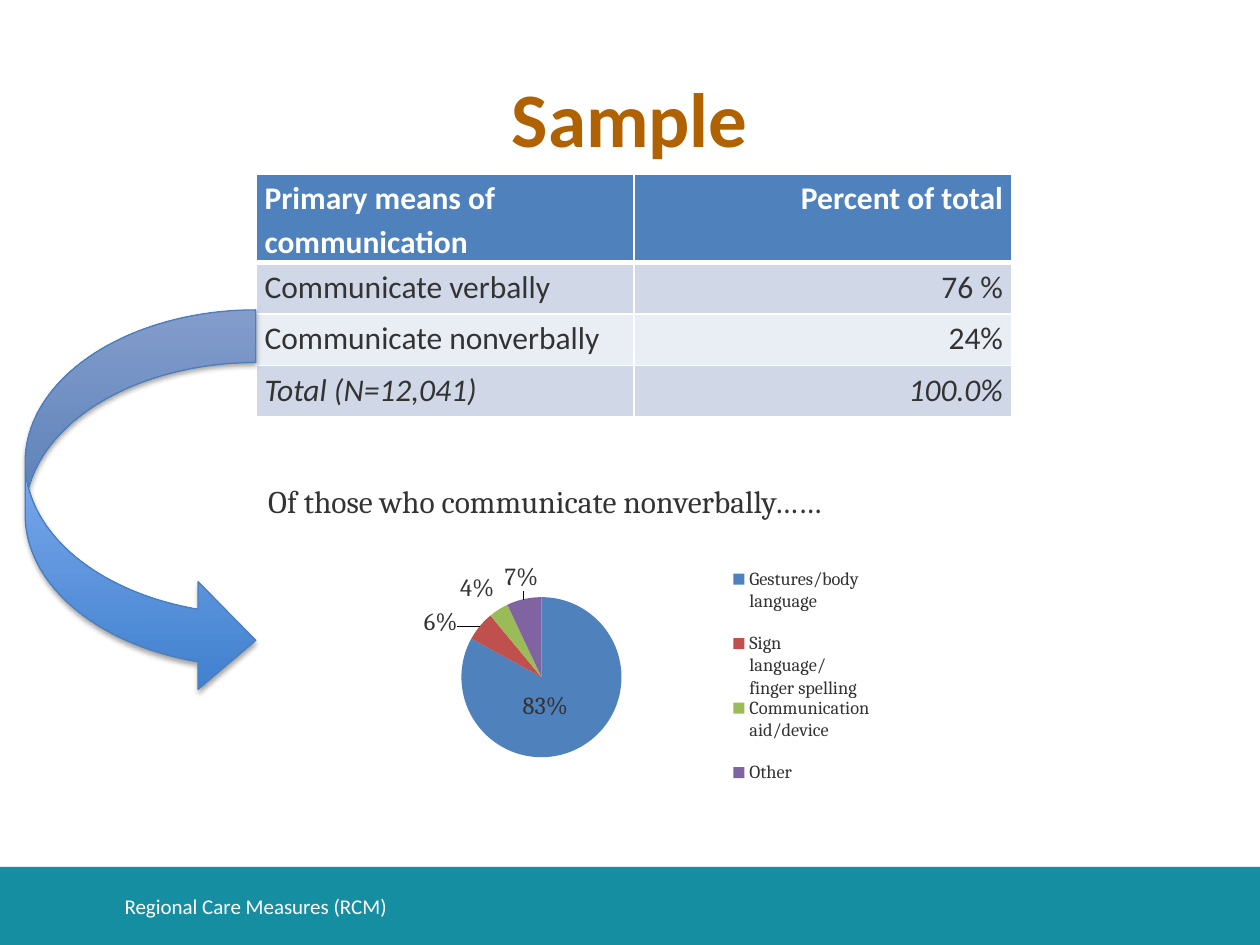
from lxml import etree
from pptx import Presentation
from pptx.chart.data import CategoryChartData
from pptx.dml.color import RGBColor
from pptx.enum.chart import XL_CHART_TYPE, XL_LABEL_POSITION, XL_LEGEND_POSITION
from pptx.enum.shapes import MSO_SHAPE
from pptx.enum.text import MSO_ANCHOR, PP_ALIGN
from pptx.oxml import parse_xml
from pptx.oxml.ns import nsdecls, qn
from pptx.util import Inches, Pt

LEFT, CENTER, RIGHT = PP_ALIGN.LEFT, PP_ALIGN.CENTER, PP_ALIGN.RIGHT
TOP, MIDDLE = MSO_ANCHOR.TOP, MSO_ANCHOR.MIDDLE
LABEL_CENTER, LABEL_OUTSIDE = XL_LABEL_POSITION.CENTER, XL_LABEL_POSITION.OUTSIDE_END
PIE, LEGEND_RIGHT = XL_CHART_TYPE.PIE, XL_LEGEND_POSITION.RIGHT
RECTANGLE, CURVED_ARROW = MSO_SHAPE.RECTANGLE, MSO_SHAPE.CURVED_RIGHT_ARROW

# Content
TEXT_COLOR, WHITE = "333333", "FFFFFF"
TEXTS = [  # text, box, alignment, anchor, format
    ("Sample", (0.5, 0.3, 9, 1.25), CENTER, MIDDLE,
     {"name": "Calibri", "size": Pt(44), "bold": True, "color": "B06100"}),
    ("Regional Care Measures (RCM)", (0.89, 6.99, 7.4, 0.4), LEFT, MIDDLE,
     {"name": "Calibri", "size": Pt(12), "color": WHITE}),
    ("Of those who communicate nonverbally……", (2.03, 3.78, 6.35, 0.4), LEFT, TOP,
     {"name": "Cambria", "size": Pt(18), "color": TEXT_COLOR}),
]
TABLE_ROWS = [  # cells, fill, format
    (("Primary means of communication", "Percent of total"), "4F81BD",
     {"bold": True, "color": WHITE}),
    (("Communicate verbally", "76 %"), "D0D8E8", {}),
    (("Communicate nonverbally", "24%"), "E9EDF4", {}),
    (("Total (N=12,041)", "100.0%"), "D0D8E8", {"italic": True}),
]
CELL_FORMAT = {"name": "Calibri", "size": Pt(18), "bold": False, "color": TEXT_COLOR}
SLICES = [  # category, share, color, label position, label shift
    ("Gestures/body language", 0.83, "4F81BD", LABEL_CENTER, (-0.03, -0.02)),
    ("Sign language/finger spelling", 0.06, "C0504D", LABEL_OUTSIDE, (-0.03, 0.06)),
    ("Communication aid/device", 0.04, "9BBB59", LABEL_OUTSIDE, None),
    ("Other", 0.07, "8064A2", LABEL_OUTSIDE, (0.03, 0)),
]


def rgb(value):
    return RGBColor.from_string(value)


def inches(*values):
    return [Inches(value) for value in values]


def format_font(font, values):
    for name, value in values.items():
        if name == "color":
            font.color.rgb = rgb(value)
        else:
            setattr(font, name, value)


def add_text(slide, text, box, alignment, anchor, values):
    frame = slide.shapes.add_textbox(*inches(*box)).text_frame
    frame.word_wrap = True
    frame.vertical_anchor = anchor
    paragraph = frame.paragraphs[0]
    paragraph.alignment = alignment
    run = paragraph.add_run()
    run.text = text
    format_font(run.font, values)


def add_borders(cell, bottom_width):
    properties = cell._tc.get_or_add_tcPr()
    widths = {"lnL": 1, "lnR": 1, "lnT": 1, "lnB": bottom_width}
    for index, (tag, width) in enumerate(widths.items()):
        properties.insert(index, parse_xml(
            f'<a:{tag} {nsdecls("a")} w="{Pt(width)}"><a:solidFill>'
            f'<a:srgbClr val="{WHITE}"/></a:solidFill></a:{tag}>'))


def add_summary_table(slide):
    table = slide.shapes.add_table(
        len(TABLE_ROWS), 2, *inches(2.03, 1.38, 6, 0.41 * len(TABLE_ROWS))).table
    for row, (texts, fill, values) in enumerate(TABLE_ROWS):
        for column, text in enumerate(texts):
            cell = table.cell(row, column)
            cell.fill.solid()
            cell.fill.fore_color.rgb = rgb(fill)
            cell.margin_left = cell.margin_right = Inches(0.07)
            cell.margin_top = cell.margin_bottom = 0
            paragraph = cell.text_frame.paragraphs[0]
            paragraph.alignment = (LEFT, RIGHT)[column]
            paragraph.line_spacing = 1.15
            run = paragraph.add_run()
            run.text = text
            format_font(run.font, {**CELL_FORMAT, **values})
            add_borders(cell, 3 if row == 0 else 1)


def chart_layout(**values):
    layout = parse_xml(f'<c:layout {nsdecls("c")}><c:manualLayout/></c:layout>')
    for tag, value in values.items():
        etree.SubElement(layout[0], qn(f"c:{tag}")).set("val", str(value))
    return layout


def set_layout(parent, index, **values):
    for old in parent.findall(qn("c:layout")):
        parent.remove(old)
    parent.insert(index, chart_layout(**values))


def add_pie(slide):
    data = CategoryChartData(number_format="0%")
    data.categories = [item[0] for item in SLICES]
    data.add_series("Series 1", [item[1] for item in SLICES])
    chart = slide.shapes.add_chart(PIE, *inches(2.75, 4.33, 4.3, 2.05), data).chart
    base = {"name": "Cambria", "color": TEXT_COLOR}
    format_font(chart.font, {**base, "size": Pt(10)})
    chart.has_title = False
    chart.has_legend = True
    legend = chart.legend
    legend.position = LEGEND_RIGHT
    legend.include_in_layout = False
    format_font(legend.font, {**base, "size": Pt(10.5)})

    # Slices and their labels
    chart.plots[0].vary_by_categories = True
    series = chart.plots[0].series[0]
    labels = series.data_labels
    labels.show_value = True
    labels.number_format = "0%"
    labels.number_format_is_linked = False
    format_font(labels.font, {**base, "size": Pt(14)})
    for index, (_, _, color, position, shift) in enumerate(SLICES):
        point = series.points[index]
        point.format.fill.solid()
        point.format.fill.fore_color.rgb = rgb(color)
        label = point.data_label
        format_font(label.font, {**base, "size": Pt(14)})
        label.position = position
        if shift:
            set_layout(labels._element.findall(qn("c:dLbl"))[index], 1,
                       x=shift[0], y=shift[1])

    # Places of pie and legend inside the chart
    set_layout(chart._chartSpace.chart.plotArea, 0, layoutTarget="inner",
               xMode="edge", yMode="edge", x=0.21, y=0.2, w=0.3, h=0.62)
    set_layout(legend._element, 1, xMode="edge", yMode="edge",
               x=0.7, y=0.01, w=0.28, h=0.99)


def add_footer_band(slide):
    band = slide.shapes.add_shape(RECTANGLE, *inches(0, 6.88, 10, 0.62))
    band.shadow.inherit = False
    band.fill.solid()
    band.fill.fore_color.rgb = rgb("168EA2")
    band.line.fill.background()


def add_curved_arrow(slide):
    arrow = slide.shapes.add_shape(CURVED_ARROW, *inches(0.2, 2.46, 1.83, 3.05))
    for index, value in enumerate((0.228, 0.467, 0.25)):
        arrow.adjustments[index] = value
    arrow.fill.gradient()
    arrow.fill.gradient_angle = 90
    for stop, color in zip(arrow.fill.gradient_stops, ("3F80CE", "A4C4FF")):
        stop.color.rgb = rgb(color)
    arrow.line.color.rgb = rgb("4B7EBC")
    arrow.line.width = Pt(0.75)
    arrow.shadow.inherit = False
    effects = arrow._element.spPr.find(qn("a:effectLst"))
    effects.append(parse_xml(
        f'<a:outerShdw {nsdecls("a")} blurRad="{Pt(3.1)}" dist="{Pt(1.8)}" '
        'dir="5400000" rotWithShape="0"><a:srgbClr val="000000">'
        '<a:alpha val="35000"/></a:srgbClr></a:outerShdw>'))


def main():
    presentation = Presentation()
    presentation.slide_width, presentation.slide_height = inches(10, 7.5)
    slide = presentation.slides.add_slide(presentation.slide_layouts[6])
    add_footer_band(slide)
    add_summary_table(slide)
    add_pie(slide)
    for text in TEXTS:
        add_text(slide, *text)
    add_curved_arrow(slide)
    presentation.save("out.pptx")


if __name__ == "__main__":
    main()
